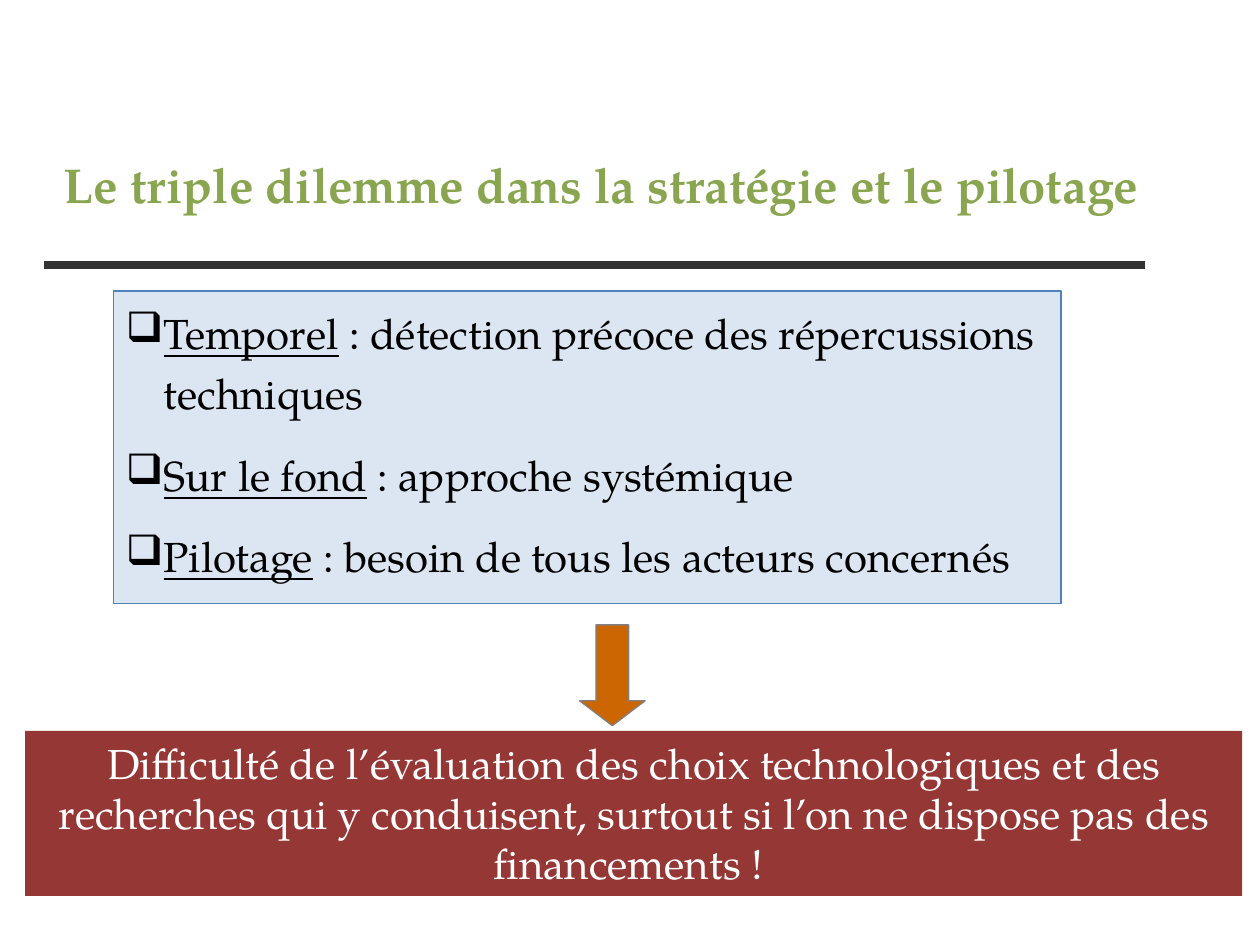
import pptx
import pptx.util
import pptx.dml.color
import pptx.enum.shapes
import pptx.enum.text
import pptx.oxml.ns
from lxml import etree

Inches, Pt = pptx.util.Inches, pptx.util.Pt
SHAPE = pptx.enum.shapes.MSO_SHAPE
ALIGN = pptx.enum.text.PP_ALIGN
ANCHOR = pptx.enum.text.MSO_ANCHOR

FONT = "TeX Gyre Pagella"
COLORS = {
    "title": "89A54F", "rule": "333333", "text": "000000",
    "panel": "DCE6F2", "panel_line": "4F81BD",
    "arrow": "CC6600", "arrow_line": "808080",
    "conclusion": "953735", "conclusion_text": "FFFFFF",
}

TITLE = "Le triple dilemme dans la stratégie et le pilotage"
DILEMMAS = [
    ("Temporel", " : détection précoce des répercussions techniques"),
    ("Sur le fond", " : approche systémique"),
    ("Pilotage", " : besoin de tous les acteurs concernés"),
]
CONCLUSION = ("Difficulté de l’évaluation des choix technologiques et des "
              "recherches qui y conduisent, surtout si l’on ne dispose pas "
              "des financements ! ")


def rgb(name):
    return pptx.dml.color.RGBColor.from_string(COLORS[name])


def add_text(paragraph, text, size=24, color="text", bold=False,
             underline=False, align=ALIGN.LEFT):
    paragraph.alignment = align
    run = paragraph.add_run()
    run.text = text
    font = run.font
    font.name, font.size = FONT, Pt(size)
    font.bold, font.underline = bold, underline
    font.color.rgb = rgb(color)


def add_block(slide, kind, box, fill, line=None, anchor=ANCHOR.TOP):
    block = slide.shapes.add_shape(kind, *map(Inches, box))
    block.shadow.inherit = False
    block.fill.solid()
    block.fill.fore_color.rgb = rgb(fill)
    if line:
        block.line.color.rgb = rgb(line)
        block.line.width = Pt(0.75)
    else:
        block.line.fill.background()
    block.text_frame.word_wrap = True
    block.text_frame.vertical_anchor = anchor
    return block


def add_bullet(paragraph, char, indent):
    properties = paragraph._p.get_or_add_pPr()
    properties.set("marL", str(Inches(indent)))
    properties.set("indent", str(-Inches(indent)))
    bullet = etree.SubElement(properties, pptx.oxml.ns.qn("a:buChar"))
    bullet.set("char", char)


def add_rule(slide, left, right, y):
    rule = slide.shapes.add_connector(
        pptx.enum.shapes.MSO_CONNECTOR.STRAIGHT,
        Inches(left), Inches(y), Inches(right), Inches(y))
    rule.line.color.rgb = rgb("rule")
    rule.line.width = Pt(4.5)
    etree.SubElement(rule._element.spPr, pptx.oxml.ns.qn("a:effectLst"))


def main():
    deck = pptx.Presentation()
    deck.slide_width, deck.slide_height = Inches(10), Inches(7.5)
    slide = deck.slides.add_slide(deck.slide_layouts[6])

    title = slide.shapes.add_textbox(*map(Inches, (0.28, 0.97, 8.98, 0.98)))
    title.text_frame.word_wrap = True
    title.text_frame.vertical_anchor = ANCHOR.MIDDLE
    add_text(title.text_frame.paragraphs[0], TITLE, size=28, color="title",
             bold=True, align=ALIGN.CENTER)

    panel = add_block(slide, SHAPE.RECTANGLE, (0.9, 2.31, 7.52, 2.48),
                      "panel", "panel_line").text_frame
    for i, (name, description) in enumerate(DILEMMAS):
        paragraph = panel.add_paragraph() if i else panel.paragraphs[0]
        paragraph.line_spacing = 1.2
        paragraph.space_before = Pt(12 if i else 5)
        add_bullet(paragraph, "❑", 0.3)
        add_text(paragraph, name, underline=True)
        add_text(paragraph, description)

    arrow = add_block(slide, SHAPE.DOWN_ARROW, (4.6, 4.96, 0.52, 0.8),
                      "arrow", "arrow_line")
    arrow.adjustments[1] = 0.38

    conclusion = add_block(slide, SHAPE.RECTANGLE, (0.2, 5.8, 9.66, 1.31),
                           "conclusion")
    add_text(conclusion.text_frame.paragraphs[0], CONCLUSION,
             color="conclusion_text", align=ALIGN.CENTER)

    add_rule(slide, 0.35, 9.09, 2.1)
    deck.save("out.pptx")


if __name__ == "__main__":
    main()
